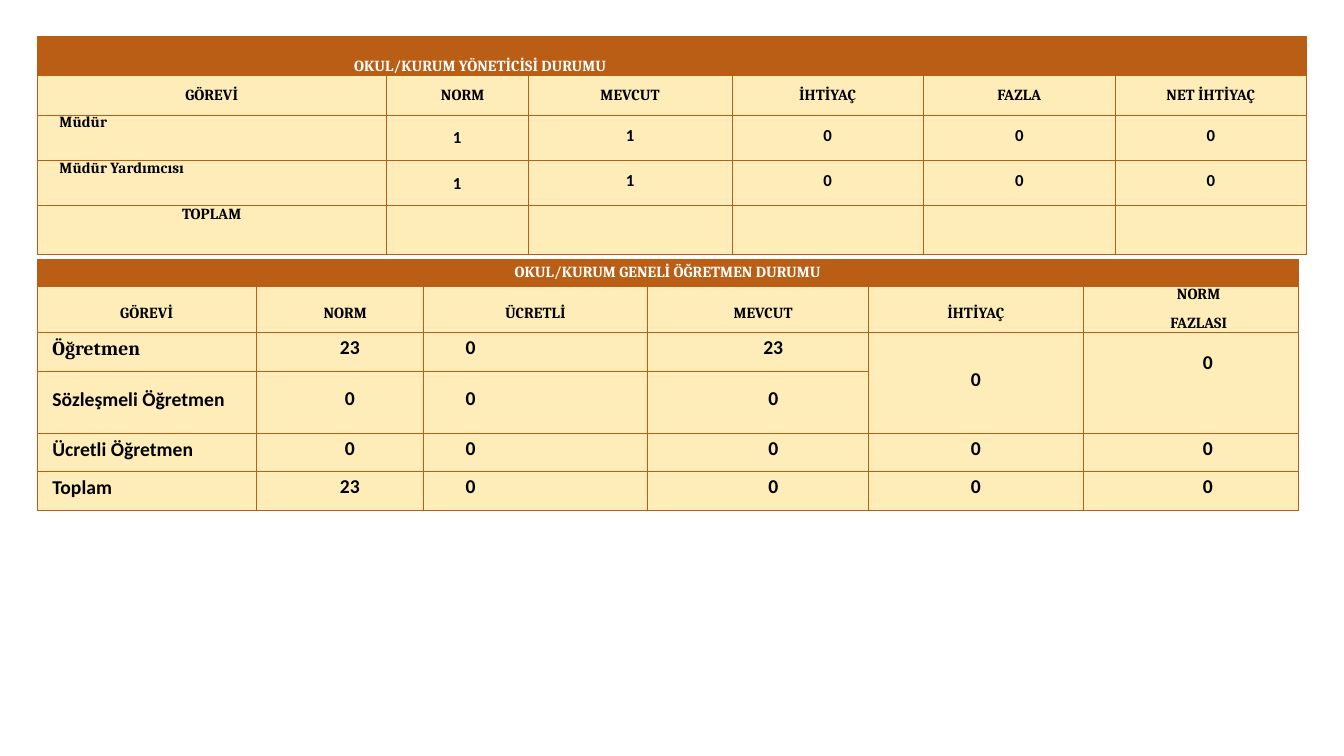
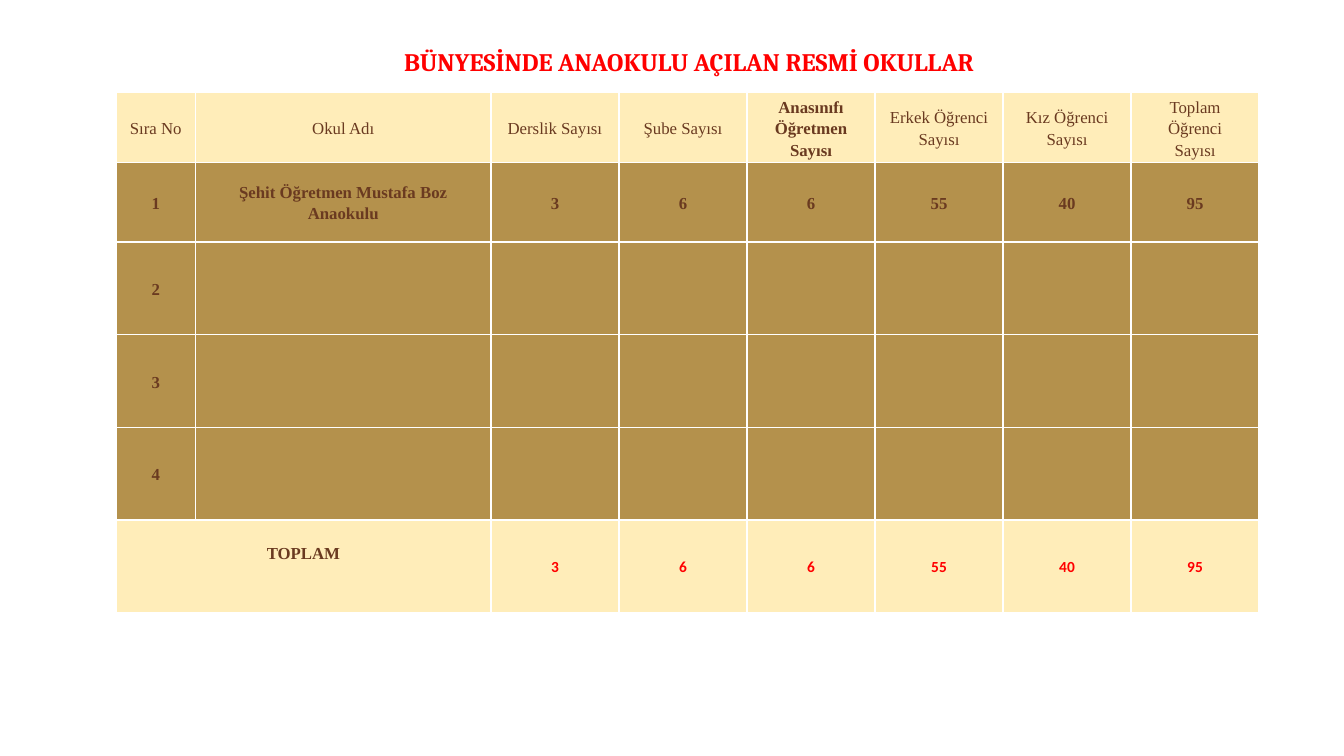
"""Build two slides of school staffing and kindergarten tables."""
import pptx
import pptx.util
import pptx.dml.color
import pptx.enum.text
import pptx.oxml.ns
import lxml.etree

Inches, Pt = pptx.util.Inches, pptx.util.Pt
ALIGN, ANCHOR = pptx.enum.text.PP_ALIGN, pptx.enum.text.MSO_ANCHOR
COLORS = {"rust": "B95E14", "cream": "FFEDB9", "tan": "B4914C", "brown": "6A3A20",
          "red": "FF0000", "white": "FFFFFF", "black": "000000"}

STYLE = dict(font="Cambria", size=11, color="black", bold=True, align=ALIGN.CENTER,
             anchor=ANCHOR.MIDDLE, indent=0, spacing=Pt(13), after=8,
             margins=(0.07, 0, 0.07, 0), fill="cream")
BANNER = STYLE | dict(color="white", fill="rust")
NUMBER = STYLE | dict(font="Calibri", size=12, spacing=Pt(12))
ROLE = STYLE | dict(align=ALIGN.LEFT, anchor=ANCHOR.TOP, indent=0.15, spacing=Pt(12))
HEAD = STYLE | dict(spacing=Pt(19))
COUNT = NUMBER | dict(size=14)
STAFF = COUNT | dict(align=ALIGN.LEFT, indent=0.08, spacing=Pt(13))
SCHOOL_HEAD = STYLE | dict(font="Times New Roman", size=12, color="brown", bold=False,
                           spacing=1.15, after=0)
SCHOOL = SCHOOL_HEAD | dict(bold=True, fill="tan")
SUM_LABEL = SCHOOL | dict(fill="cream", anchor=ANCHOR.TOP, margins=(0.07, 0.22, 0.07, 0))
SUM = STYLE | dict(font="Calibri", color="red", spacing=1.0, after=0,
                   margins=(0.01, 0.01, 0.01, 0))

MANAGERS = dict(
    at=(0.37, 0.36), cols=[3.46, 1.41, 2.02, 1.9, 1.9, 1.9],
    heights=[0.39, 0.39, 0.45, 0.45, 0.48], border=("rust", 0.5), first_edge=1,
    rows=[["OKUL/KURUM YÖNETİCİSİ DURUMU"],
          ["GÖREVİ", "NORM", "MEVCUT", "İHTİYAÇ", "FAZLA", "NET İHTİYAÇ"],
          ["Müdür", "1", "1", "0", "0", "0"],
          ["Müdür Yardımcısı", "1", "1", "0", "0", "0"],
          ["TOPLAM"]],
    styles=[BANNER | dict(anchor=ANCHOR.BOTTOM), STYLE, NUMBER, NUMBER,
            STYLE | dict(anchor=ANCHOR.TOP)],
    special={(1, 1): dict(indent=0.11)}
    | {(r, 0): ROLE for r in (2, 3)}
    | {(r, 1): dict(spacing=1.07) for r in (2, 3)},
    merges=[(0, 0, 0, 3)])

TEACHERS = dict(
    at=(0.37, 2.57), cols=[2.17, 1.66, 2.22, 2.19, 2.14, 2.13],
    heights=[0.27, 0.46, 0.38, 0.62, 0.38, 0.38], border=("rust", 0.5), first_edge=0.5,
    rows=[["OKUL/KURUM GENELİ ÖĞRETMEN DURUMU"],
          ["GÖREVİ", "NORM", "ÜCRETLİ", "MEVCUT", "İHTİYAÇ", "NORM\nFAZLASI"],
          ["Öğretmen", "23", "0", "23", "0", "0"],
          ["Sözleşmeli Öğretmen", "0", "0", "0"],
          ["Ücretli Öğretmen", "0", "0", "0", "0", "0"],
          ["Toplam", "23", "0", "0", "0", "0"]],
    styles=[BANNER, HEAD] + [COUNT] * 4,
    special={(1, 1): dict(indent=0.11), (1, 3): dict(indent=0.11),
             (1, 5): dict(indent=0.15, spacing=Pt(12.5))}
    | {(r, 0): STAFF for r in range(2, 6)}
    | {(r, 1): dict(indent=0.2) for r in range(2, 6)}
    | {(r, 2): dict(indent=0.35, align=ALIGN.LEFT) for r in range(2, 6)}
    | {(r, 3): dict(indent=0.31) for r in range(2, 6)}
    | {(r, 5): dict(indent=0.33) for r in range(4, 6)}
    | {(2, 0): STAFF | dict(font="Cambria"),
       (2, 5): dict(indent=0.33, anchor=ANCHOR.TOP, margins=(0.07, 0.25, 0.07, 0))},
    merges=[(0, 0, 0, 5), (2, 4, 3, 4), (2, 5, 3, 5)])

SCHOOLS = dict(
    at=(1.15, 0.92), cols=[0.79, 2.93] + [1.27] * 6,
    heights=[0.63, 0.79] + [0.92] * 4, border=("white", 1), first_edge=1,
    rows=[["Sıra No", "Okul Adı", "Derslik Sayısı", "Şube Sayısı",
           "Anasınıfı Öğretmen Sayısı", "Erkek Öğrenci\nSayısı", "Kız Öğrenci\nSayısı",
           "Toplam\vÖğrenci\nSayısı"],
          ["1", "Şehit Öğretmen Mustafa Boz Anaokulu", "3", "6", "6", "55", "40", "95"],
          ["2"], ["3"], ["4"],
          ["TOPLAM", "", "3", "6", "6", "55", "40", "95"]],
    styles=[SCHOOL_HEAD] + [SCHOOL] * 4 + [SUM],
    special={(0, 4): dict(bold=True), (5, 0): SUM_LABEL},
    merges=[(5, 0, 5, 1)])

TITLE = "BÜNYESİNDE ANAOKULU AÇILAN RESMİ OKULLAR"


def rgb(name):
    return pptx.dml.color.RGBColor.from_string(COLORS[name])


def set_font(p, name, size, color, bold):
    p.font.name, p.font.size, p.font.bold = name, Pt(size), bold
    p.font.color.rgb = rgb(color)


def add_borders(cell, color, widths):
    qn = pptx.oxml.ns.qn
    tcPr = cell._tc.get_or_add_tcPr()
    for side, width in zip("LRTB", widths):
        ln = lxml.etree.SubElement(tcPr, qn(f"a:ln{side}"), w=str(Pt(width)))
        fill = lxml.etree.SubElement(ln, qn("a:solidFill"))
        lxml.etree.SubElement(fill, qn("a:srgbClr"), val=COLORS[color])


def fill_cell(cell, text, style):
    cell.fill.solid()
    cell.fill.fore_color.rgb = rgb(style["fill"])
    cell.vertical_anchor = style["anchor"]
    (cell.margin_left, cell.margin_top,
     cell.margin_right, cell.margin_bottom) = map(Inches, style["margins"])
    if not text:
        return
    tf = cell.text_frame
    tf.text = text
    for p in tf.paragraphs:
        p.alignment, p.line_spacing = style["align"], style["spacing"]
        p.space_after = Pt(style["after"])
        p._p.get_or_add_pPr().set("marL", str(Inches(style["indent"])))
        set_font(p, style["font"], style["size"], style["color"], style["bold"])


def add_grid(s, data):
    cols, heights = data["cols"], data["heights"]
    box = (*data["at"], sum(cols), sum(heights))
    table = s.shapes.add_table(len(heights), len(cols), *map(Inches, box)).table
    table.first_row = table.horz_banding = False
    for col, width in zip(table.columns, cols):
        col.width = Inches(width)
    for row, height in zip(table.rows, heights):
        row.height = Inches(height)
    color, width = data["border"]
    for r, texts in enumerate(data["rows"]):
        for c in range(len(cols)):
            left = data["first_edge"] if c == 1 else width
            right = data["first_edge"] if c == 0 else width
            cell = table.cell(r, c)
            add_borders(cell, color, (left, right, width, width))
            style = data["styles"][r] | data["special"].get((r, c), {})
            fill_cell(cell, texts[c] if c < len(texts) else "", style)
    for top, left, bottom, right in data["merges"]:
        table.cell(top, left).merge(table.cell(bottom, right))


def add_title(s, text):
    tf = s.shapes.add_textbox(*map(Inches, (2.25, 0.44, 9.17, 0.39))).text_frame
    tf.word_wrap = True
    tf.text = text
    p = tf.paragraphs[0]
    p.alignment, p.line_spacing = ALIGN.CENTER, 0.9
    set_font(p, "Cambria", 18, "red", True)


def main():
    prs = pptx.Presentation()
    prs.slide_width, prs.slide_height = Inches(13.33), Inches(7.5)
    for title, grids in [(None, [MANAGERS, TEACHERS]), (TITLE, [SCHOOLS])]:
        s = prs.slides.add_slide(prs.slide_layouts[6])
        if title:
            add_title(s, title)
        for data in grids:
            add_grid(s, data)
    prs.save("out.pptx")


if __name__ == "__main__":
    main()
